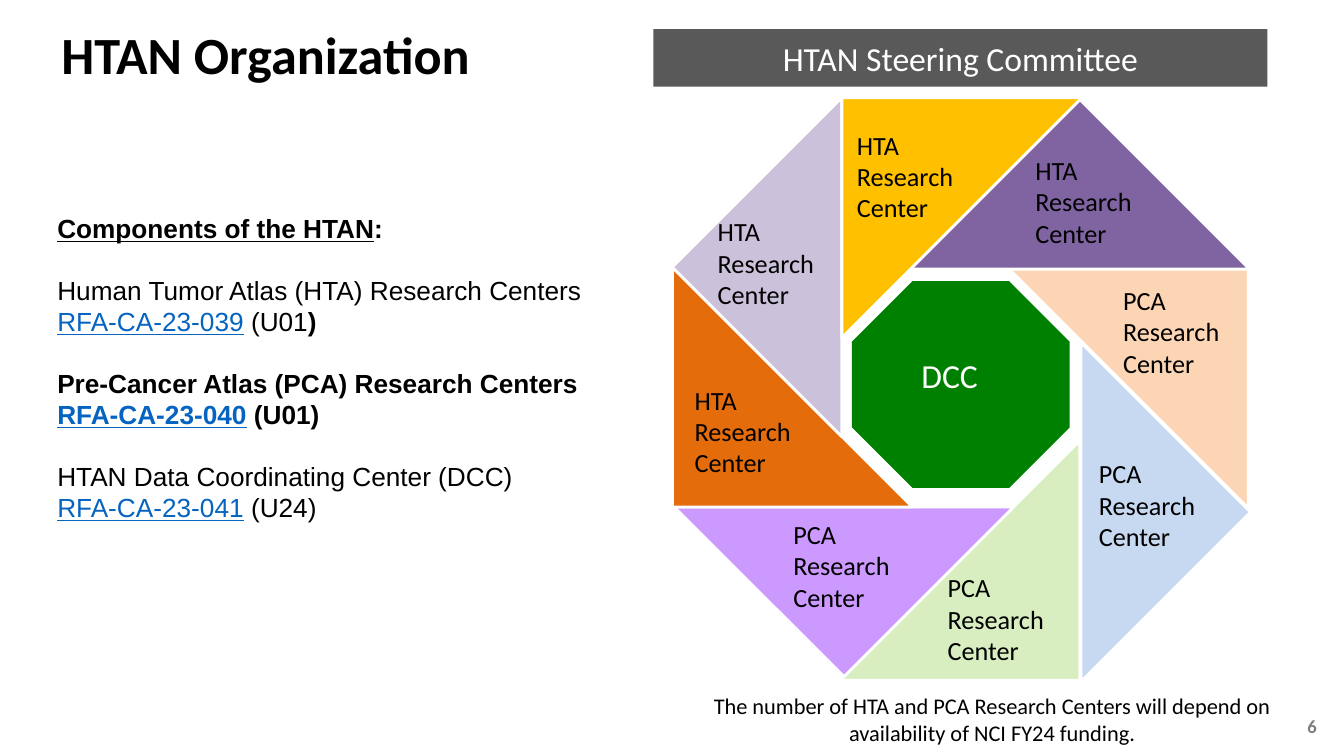
from pptx import Presentation
from pptx.dml.color import RGBColor
from pptx.enum.shapes import MSO_SHAPE
from pptx.enum.text import MSO_ANCHOR, PP_ALIGN
from pptx.util import Emu, Pt

RECTANGLE, OCTAGON, TRIANGLE = MSO_SHAPE.RECTANGLE, MSO_SHAPE.OCTAGON, MSO_SHAPE.RIGHT_TRIANGLE
TOP, MIDDLE, BOTTOM = MSO_ANCHOR.TOP, MSO_ANCHOR.MIDDLE, MSO_ANCHOR.BOTTOM
LEFT, CENTER, RIGHT = PP_ALIGN.LEFT, PP_ALIGN.CENTER, PP_ALIGN.RIGHT

EMU_PER_PX = 9144  # 100 px to the inch
BODY_SIZE = 18.7
SECTION_GAP = 21.5
TRIANGLE_SIDE = 238

COLORS = {
    "black": "000000", "white": "FFFFFF", "banner": "595959", "number": "7F7F7F",
    "link": "0563C1", "green": "008000", "peach": "FCD5B5", "ice": "C6D9F1",
    "lime": "D8EEC0", "violet": "CC99FF", "orange": "E46C0A", "lilac": "CCC1DA",
    "purple": "8064A2", "gold": "FFC000",
}

# rotation, triangle left and top, fill, atlas, label left and top
CENTERS = [
    (180, 1000, 266, "peach", "PCA", 1104, 277),
    (225, 953, 389, "ice", "PCA", 1080, 449),
    (270, 833, 437, "lime", "PCA", 930, 562),
    (315, 718, 384, "violet", "PCA", 777, 509),
    (0, 667, 265, "orange", "HTA", 679, 376),
    (45, 716, 146, "lilac", "HTA", 702, 209),
    (135, 952, 148, "purple", "HTA", 1017, 148),
    (90, 835, 97, "gold", "HTA", 840, 123),
]

BOLD = {"bold": True}
LINK = {"color": "link", "underline": True}
HEADING = [("Components of the HTAN", {"bold": True, "underline": True}), (":", BOLD)]
# Each component is a list of paragraphs, each paragraph a list of runs
COMPONENTS = [
    [HEADING],
    [["Human Tumor Atlas (HTA) Research Centers"],
     [("RFA-CA-23-039", LINK), " (U01", (")", BOLD)]],
    [[("Pre-Cancer Atlas (PCA) Research Centers ", BOLD),
      ("RFA-CA-23-040", {**LINK, **BOLD}), (" (U01)", BOLD)]],
    [["HTAN Data Coordinating Center (DCC)"],
     [("RFA-CA-23-041", LINK), " (U24)"]],
]


def px(length):
    return Emu(length * EMU_PER_PX)


def rgb(name):
    return RGBColor.from_string(COLORS[name])


def add_run(paragraph, text, size=BODY_SIZE, font="Calibri", color="black",
            bold=False, underline=False):
    run = paragraph.add_run()
    run.text = text
    run.font.size, run.font.name = Pt(size), font
    run.font.bold, run.font.underline = bold, underline
    run.font.color.rgb = rgb(color)


class SlideBuilder:
    def __init__(self, slide):
        self.shapes = slide.shapes

    def shape(self, kind, left, top, width, height, fill, outline=None, rotation=0):
        shape = self.shapes.add_shape(kind, px(left), px(top), px(width), px(height))
        shape.shadow.inherit = False
        shape.rotation = rotation
        shape.fill.solid()
        shape.fill.fore_color.rgb = rgb(fill)
        if outline:
            shape.line.color.rgb = rgb(outline)
            shape.line.width = Pt(2)
        else:
            shape.line.fill.background()
        return shape

    def text(self, left, top, width, height, lines, **style):
        box = self.shapes.add_textbox(px(left), px(top), px(width), px(height))
        self.fill_frame(box.text_frame, lines, **style)

    def fill_frame(self, frame, lines, align=LEFT, anchor=TOP, insets=(10, 5),
                   spacing=None, gaps=(), **font):
        """Fill a frame with paragraphs; gaps holds the indexes that open a section."""
        frame.word_wrap = True
        frame.vertical_anchor = anchor
        frame.margin_left = frame.margin_right = px(insets[0])
        frame.margin_top = frame.margin_bottom = px(insets[1])
        for index, line in enumerate(lines):
            paragraph = frame.add_paragraph() if index else frame.paragraphs[0]
            paragraph.alignment = align
            if spacing:
                paragraph.line_spacing = spacing
            if index in gaps:
                paragraph.space_before = Pt(SECTION_GAP)
            for run in [line] if isinstance(line, str) else line:
                words, extra = (run, {}) if isinstance(run, str) else run
                add_run(paragraph, words, **{**font, **extra})

    def components(self):
        lines, gaps = [], []
        for component in COMPONENTS:
            if lines:
                gaps.append(len(lines))
            lines += component
        self.text(47, 206, 590, 356, lines, gaps=gaps, font="Arial")

    def research_center(self, rotation, left, top, fill, atlas, label_left, label_top):
        self.shape(TRIANGLE, left, top, TRIANGLE_SIDE, TRIANGLE_SIDE, fill, "white", rotation)
        self.text(label_left, label_top, 215, 104, [atlas, "Research", "Center"])


def main():
    deck = Presentation()
    deck.slide_width, deck.slide_height = px(1333), px(750)
    page = SlideBuilder(deck.slides.add_slide(deck.slide_layouts[6]))

    page.text(1261, 709, 45, 27, ["6"], align=RIGHT, insets=(0, 0),
              size=13.3, color="number", bold=True)
    page.text(61, 39, 1191, 46, ["HTAN Organization"], anchor=BOTTOM, insets=(0, 0),
              spacing=0.9, size=37.3, bold=True)
    banner = page.shape(RECTANGLE, 648, 29, 609, 57, "banner")
    page.fill_frame(banner.text_frame, ["HTAN Steering Committee"], align=CENTER,
                    anchor=MIDDLE, size=24, color="white")
    page.components()

    page.shape(OCTAGON, 845, 279, 216, 205, "green")
    page.text(904, 347, 262, 50, ["DCC"], size=24, color="white")
    for center in CENTERS:
        page.research_center(*center)
    page.text(677, 680, 614, 67,
              ["The number of HTA and PCA Research Centers will depend on "
               "availability of NCI FY24 funding."],
              align=CENTER, insets=(13, 7), size=16)

    deck.save("out.pptx")


if __name__ == "__main__":
    main()
